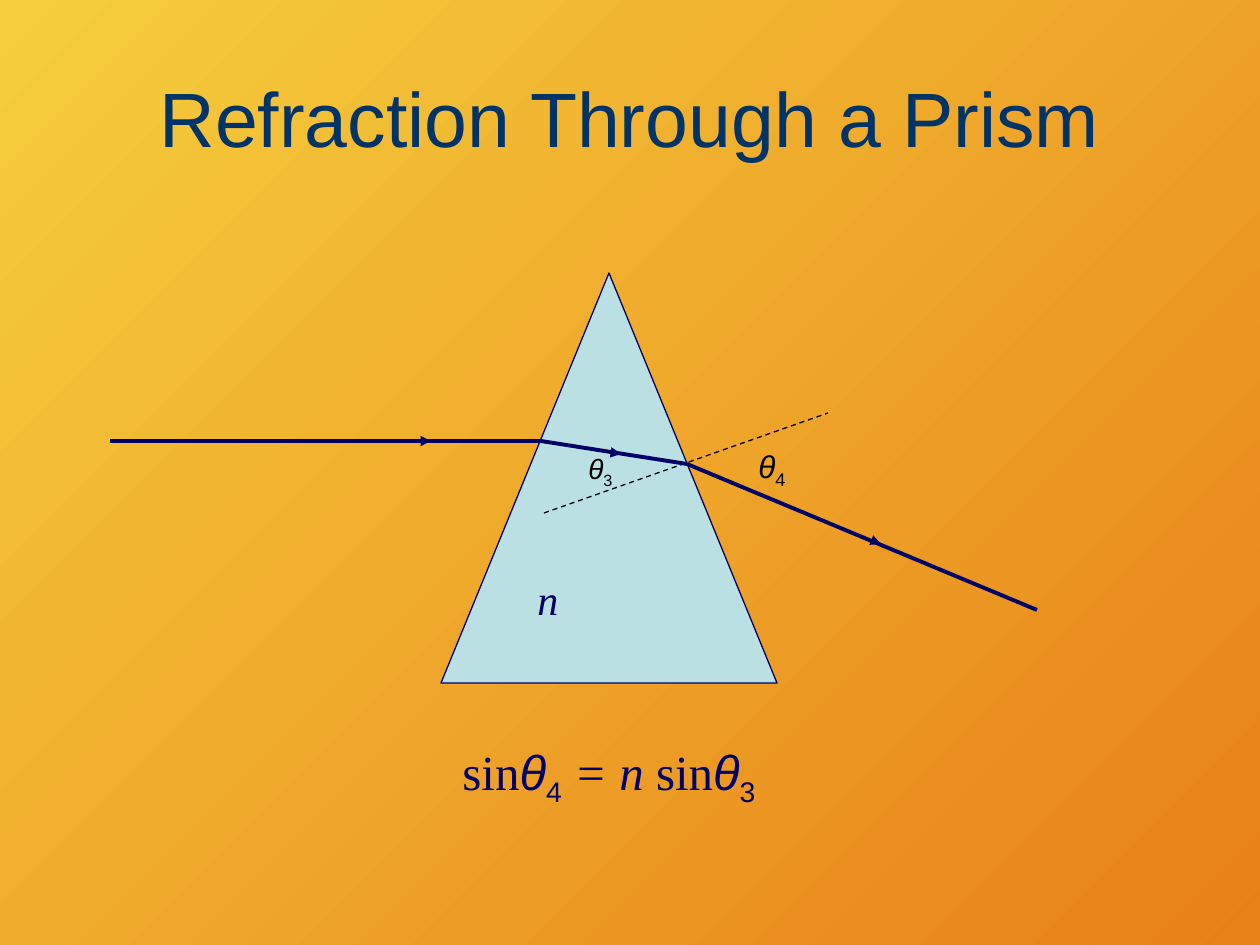
from lxml import etree
from pptx import Presentation
from pptx.dml.color import RGBColor
from pptx.enum.dml import MSO_LINE
from pptx.enum.shapes import MSO_CONNECTOR, MSO_SHAPE
from pptx.enum.text import MSO_ANCHOR, PP_ALIGN
from pptx.oxml.ns import qn
from pptx.util import Emu, Pt

SCALE = 914400 / 126
NAVY = RGBColor(0x00, 0x00, 0x66)
TEAL = RGBColor(0x00, 0x33, 0x66)
BLACK = RGBColor(0x00, 0x00, 0x00)
GLASS = RGBColor(0xBB, 0xE0, 0xE3)
YELLOW = RGBColor(0xF5, 0xCE, 0x3D)
ORANGE = RGBColor(0xE8, 0x80, 0x18)
SANS, SERIF = "Arial", "Times New Roman"
STRAIGHT = MSO_CONNECTOR.STRAIGHT
PRISM = MSO_SHAPE.ISOSCELES_TRIANGLE
DASH = MSO_LINE.DASH
LEFT, CENTER = PP_ALIGN.LEFT, PP_ALIGN.CENTER
TOP, MIDDLE = MSO_ANCHOR.TOP, MSO_ANCHOR.MIDDLE


def px(*values):
    """Turn pixel lengths into EMU."""
    return [Emu(round(v * SCALE)) for v in values]


def paint(slide):
    """Fill the background with a diagonal gradient."""
    fill = slide.background.fill
    fill.gradient()
    fill.gradient_angle = 315
    for stop, color in zip(fill.gradient_stops, (YELLOW, ORANGE)):
        stop.color.rgb = color


def add_prism(slide, box):
    """Draw the glass triangle."""
    shape = slide.shapes.add_shape(PRISM, *px(*box))
    shape.shadow.inherit = False
    shape.fill.solid()
    shape.fill.fore_color.rgb = GLASS
    shape.line.color.rgb = NAVY
    shape.line.width = Pt(0.75)


def add_line(slide, ends, width=0.75, color=NAVY, dash=None, arrow=False):
    """Draw a straight line, dashed or with an arrowhead if asked."""
    line = slide.shapes.add_connector(STRAIGHT, *px(*ends))
    line.line.color.rgb = color
    line.line.width = Pt(width)
    if dash:
        line.line.dash_style = dash
    if arrow:
        etree.SubElement(line.line._get_or_add_ln(), qn("a:tailEnd"), type="triangle")
    etree.SubElement(line._element.spPr, qn("a:effectLst"))


def add_text(slide, box, runs, size, color, align=LEFT, anchor=TOP, wrap=False):
    """Write one line of runs, each with its font, slant and subscript."""
    frame = slide.shapes.add_textbox(*px(*box)).text_frame
    frame.word_wrap = wrap
    frame.vertical_anchor = anchor
    para = frame.paragraphs[0]
    para.alignment = align
    for text, face, slant, sub in runs:
        run = para.add_run()
        run.text = text
        run.font.color.rgb = color
        looks = {"name": face, "size": Pt(size), "italic": slant}
        for key, value in looks.items():
            setattr(run.font, key, value)
        if sub:
            run.font._element.set("baseline", "-25000")


def theta(index):
    """Give the runs of an angle with its subscript."""
    return [("θ", SANS, True, False), (index, SANS, False, True)]


def main():
    """Build the slide and save it."""
    deck = Presentation()
    deck.slide_width, deck.slide_height = px(1260, 945)
    slide = deck.slides.add_slide(deck.slide_layouts[6])
    paint(slide)
    add_prism(slide, (441, 273, 336, 410))

    title = [("Refraction Through a Prism", SANS, False, False)]
    index = [("n", SERIF, True, False)]
    sine = [("sin", SERIF, False, False)]
    law = sine + theta("4") + [(" = n ", SERIF, True, False)] + sine + theta("3")
    add_text(slide, (525, 567, 42, 63), index, 24, NAVY, CENTER)
    add_text(slide, (63, 38, 1134, 158), title, 44, TEAL, CENTER, MIDDLE, True)
    add_text(slide, (746, 441, 52, 50), theta("4"), 18, BLACK)
    add_line(slide, (544, 513, 828, 413), color=BLACK, dash=DASH)
    add_text(slide, (576, 445, 53, 47), theta("3"), 16, BLACK)
    add_text(slide, (441, 735, 336, 72), law, 28, NAVY, CENTER, wrap=True)

    path = [(110, 441), (541, 441), (687, 464), (1037, 610)]
    for start, end in zip(path, path[1:]):
        add_line(slide, start + end, 2.25)
    for ends in ((357, 441, 431, 441), (602, 451, 621, 454), (844, 529, 881, 544)):
        add_line(slide, ends, arrow=True)
    deck.save("out.pptx")


if __name__ == "__main__":
    main()
